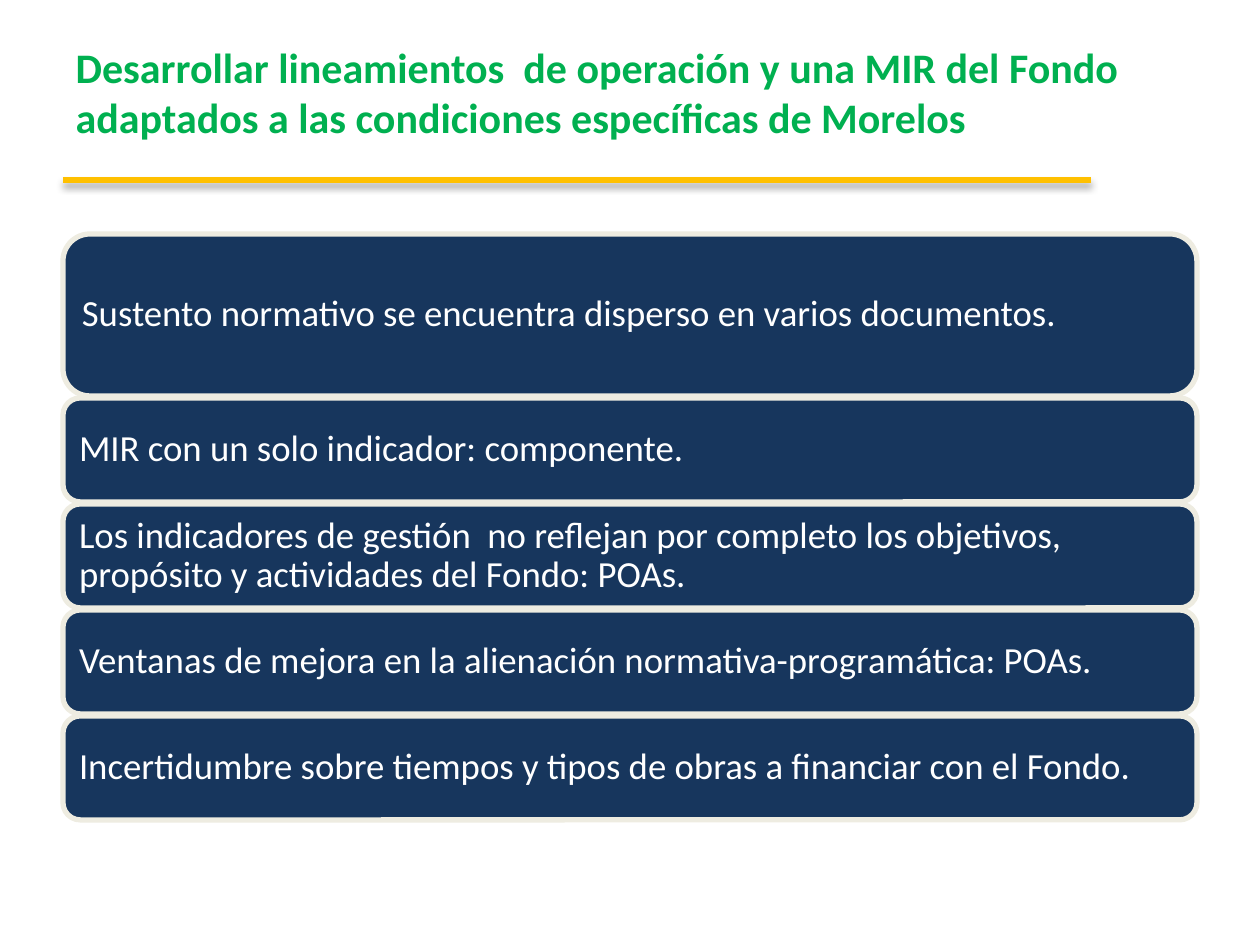
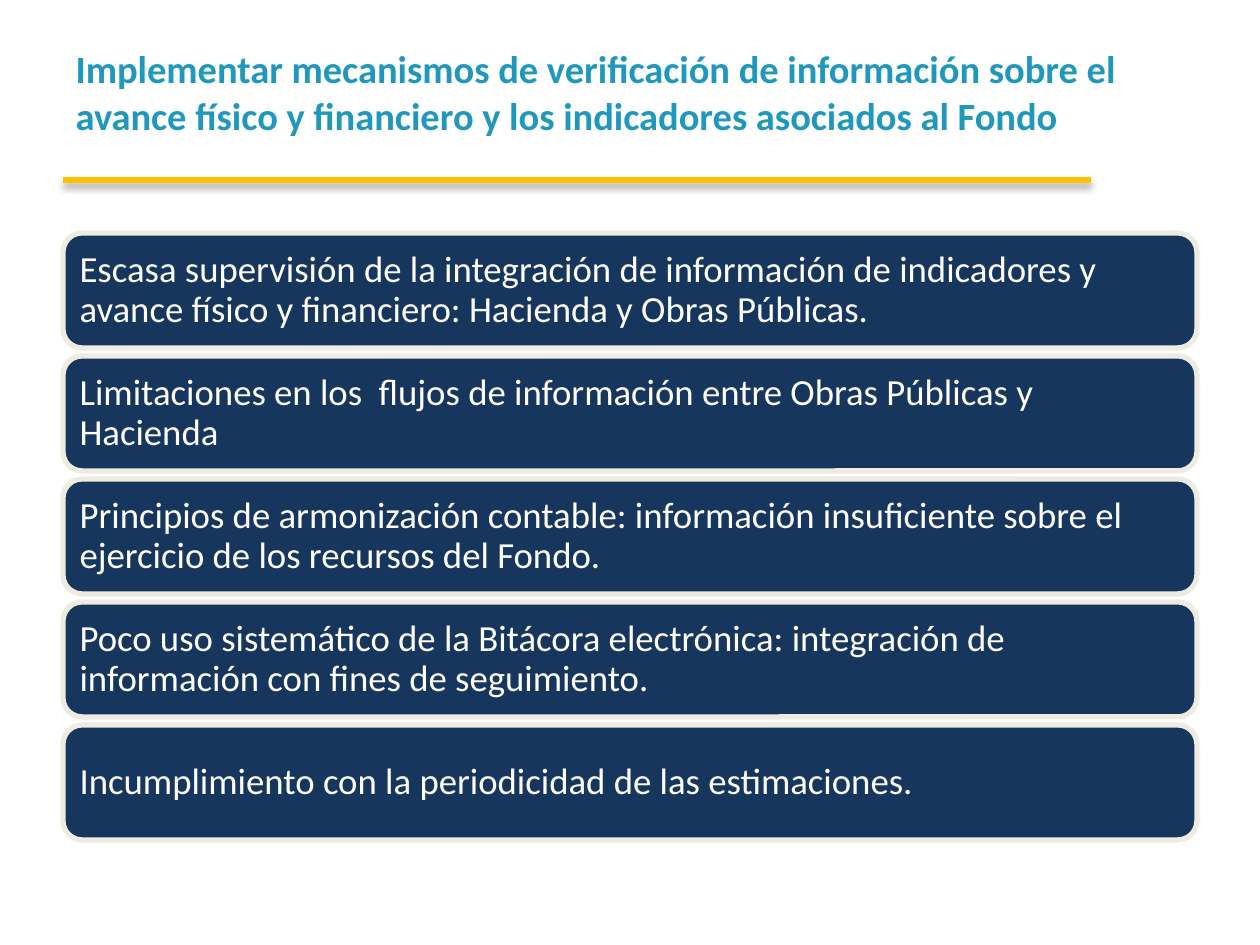
"""Build two slides of recommendations for the Fondo, each with a title, a rule and stacked cards."""
import pptx
import pptx.dml.color
import pptx.enum.shapes
import pptx.enum.text
import pptx.oxml
import pptx.util
from lxml import etree

PX = 914400 // 126
FONT = "Calibri"
COLORS = {
    "green": "00B050",
    "teal": "2098BE",
    "gold": "FFC000",
    "navy": "17365D",
    "cream": "EEECE1",
    "white": "FFFFFF",
}
LEFT, WIDTH = 63, 1134
RULE_Y, RULE_END = 180, 1091
INSET = 11
RULE_SHADOW = (
    '<a:effectLst xmlns:a="http://schemas.openxmlformats.org/drawingml/2006/main">'
    '<a:outerShdw blurRad="50800" dist="38100" dir="5400000" rotWithShape="0">'
    '<a:srgbClr val="000000"><a:alpha val="43000"/></a:srgbClr>'
    '</a:outerShdw></a:effectLst>'
)

SLIDES = [
    {
        "title": "Desarrollar lineamientos  de operación y una MIR del Fondo "
                 "adaptados a las condiciones específicas de Morelos",
        "color": "green",
        "size": 24,
        "top": 234,
        "gap": 2,
        "heights": [162, 104, 104, 104, 104],
        "cards": [
            "Sustento normativo se encuentra disperso en varios documentos.",
            "MIR con un solo indicador: componente.",
            "Los indicadores de gestión  no reflejan por completo los objetivos, "
            "propósito y actividades del Fondo: POAs.",
            "Ventanas de mejora en la alienación normativa-programática: POAs.",
            "Incertidumbre sobre tiempos y tipos de obras a financiar con el Fondo.",
        ],
    },
    {
        "title": "Implementar mecanismos de verificación de información sobre el "
                 "avance físico y financiero y los indicadores asociados al Fondo",
        "color": "teal",
        "size": 22,
        "top": 233,
        "gap": 8,
        "heights": [115] * 5,
        "cards": [
            "Escasa supervisión de la integración de información de indicadores y "
            "avance físico y financiero: Hacienda y Obras Públicas.",
            "Limitaciones en los  flujos de información entre Obras Públicas y Hacienda",
            "Principios de armonización contable: información insuficiente sobre el "
            "ejercicio de los recursos del Fondo.",
            "Poco uso sistemático de la Bitácora electrónica: integración de "
            "información con fines de seguimiento.",
            "Incumplimiento con la periodicidad de las estimaciones.",
        ],
    },
]


def rgb(name):
    return pptx.dml.color.RGBColor.from_string(COLORS[name])


def write(tf, text, size, color, bold=False):
    tf.word_wrap = True
    tf.auto_size = pptx.enum.text.MSO_AUTO_SIZE.NONE
    tf.vertical_anchor = pptx.enum.text.MSO_ANCHOR.MIDDLE
    p = tf.paragraphs[0]
    p.alignment = pptx.enum.text.PP_ALIGN.LEFT
    r = p.add_run()
    r.text = text
    r.font.name = FONT
    r.font.size = pptx.util.Pt(size)
    r.font.bold = bold
    r.font.color.rgb = rgb(color)
    return p


prs = pptx.Presentation()
prs.slide_width, prs.slide_height = 1260 * PX, 945 * PX

for content in SLIDES:
    s = prs.slides.add_slide(prs.slide_layouts[5])

    title = s.shapes.title
    title.left, title.top = LEFT * PX, 38 * PX
    title.width, title.height = WIDTH * PX, 157 * PX
    title.text_frame.margin_bottom = 56 * PX
    write(title.text_frame, content["title"], content["size"], content["color"], bold=True)

    rule = s.shapes.add_connector(
        pptx.enum.shapes.MSO_CONNECTOR.STRAIGHT,
        LEFT * PX, RULE_Y * PX, RULE_END * PX, RULE_Y * PX)
    rule.line.color.rgb = rgb("gold")
    rule.line.width = pptx.util.Pt(3)
    rule._element.spPr.append(etree.fromstring(RULE_SHADOW))

    top = content["top"]
    for text, height in zip(content["cards"], content["heights"]):
        card = s.shapes.add_shape(
            pptx.enum.shapes.MSO_SHAPE.ROUNDED_RECTANGLE,
            LEFT * PX, top * PX, WIDTH * PX, height * PX)
        card.shadow.inherit = False
        card.fill.solid()
        card.fill.fore_color.rgb = rgb("navy")
        card.line.color.rgb = rgb("cream")
        card.line.width = pptx.util.Pt(3)
        tf = card.text_frame
        tf.margin_left = tf.margin_right = tf.margin_top = tf.margin_bottom = INSET * PX
        p = write(tf, text, 21, "white")
        p.line_spacing = 0.9
        top += height + content["gap"]

prs.save("out.pptx")
